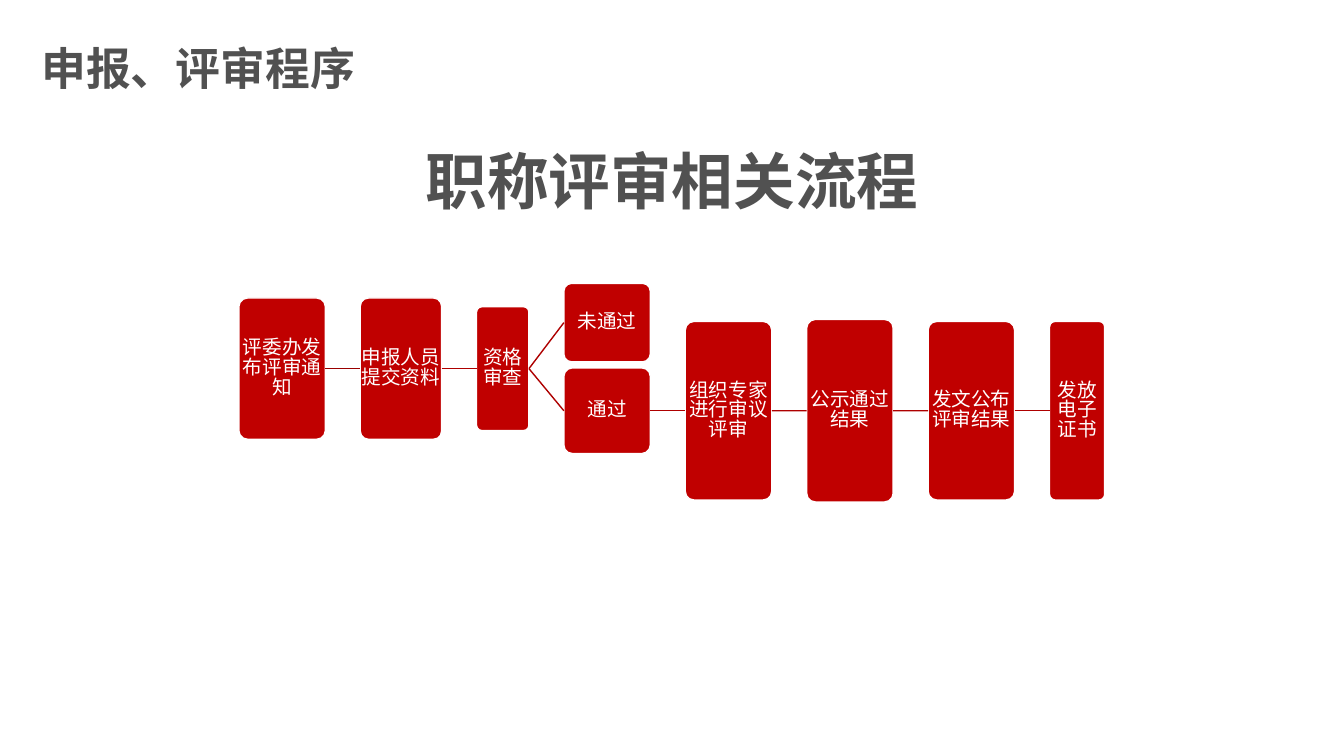
from pptx import Presentation
from pptx.dml.color import RGBColor as RGB
from pptx.enum.shapes import MSO_CONNECTOR as Conn, MSO_SHAPE as Form
from pptx.enum.text import MSO_ANCHOR as Anchor, PP_ALIGN as Align
from pptx.oxml.ns import qn
from pptx.util import Cm, Pt

RED = RGB(0xC0, 0x00, 0x00)
DARK = RGB(0x9A, 0x00, 0x00)
WINE = RGB(0xAE, 0x00, 0x00)
GRAY = RGB(0x51, 0x51, 0x51)
WHITE = RGB(0xFF, 0xFF, 0xFF)
CJK = "Noto Sans CJK SC"

TOPIC = "申报、评审程序"
TITLE = "职称评审相关流程"
LEFT, GAP = 6.02, 0.88
HIGH, MID, LOW = 8.13, 9.29, 10.35
STEPS = [
    (2.18, [("评委办发布评审通知", MID, 3.56)]),
    (2.05, [("申报人员提交资料", MID, 3.56)]),
    (1.32, [("资格审查", MID, 3.12)]),
    (2.18, [("未通过", HIGH, 1.98), ("通过", LOW, 2.16)]),
    (2.18, [("组织专家进行审议评审", LOW, 4.5)]),
    (2.18, [("公示通过结果", LOW, 4.6)]),
    (2.18, [("发文公布评审结果", LOW, 4.5)]),
    (1.39, [("发放电子证书", LOW, 4.5)]),
]


def write(shape, text, size, color, font="Arial", bold=False, wrap=True, space=None):
    frame = shape.text_frame
    frame.word_wrap = wrap
    frame.vertical_anchor = Anchor.MIDDLE
    para = frame.paragraphs[0]
    para.alignment = Align.CENTER
    para.line_spacing = space
    run = para.add_run()
    run.text = text
    run.font.name = font
    run.font.size = Pt(size)
    run.font.bold = bold
    run.font.color.rgb = color
    east = run._r.get_or_add_rPr().makeelement(qn("a:ea"), {"typeface": CJK})
    run._r.rPr.find(qn("a:latin")).addnext(east)


def add_box(slide, text, x, mid, wide, tall):
    box = slide.shapes.add_shape(
        Form.ROUNDED_RECTANGLE, Cm(x), Cm(mid - tall / 2), Cm(wide), Cm(tall))
    box.adjustments[0] = 0.1
    box.shadow.inherit = False
    box.fill.solid()
    box.fill.fore_color.rgb = RED
    box.line.color.rgb = WHITE
    box.line.width = Pt(1)
    frame = box.text_frame
    frame.margin_left = frame.margin_right = Cm(-0.05)
    frame.margin_top = frame.margin_bottom = Cm(0.03)
    write(box, text, 14, WHITE, space=0.83)
    return box


def join(slide, start, end, color):
    line = slide.shapes.add_connector(Conn.STRAIGHT, 0, 0, 0, 0)
    line.begin_connect(start, 3)
    line.end_connect(end, 1)
    line.line.color.rgb = color
    line.line.width = Pt(1)
    props = line._element.spPr
    props.append(props.makeelement(qn("a:effectLst"), {}))


def main():
    deck = Presentation()
    deck.slide_width, deck.slide_height = Cm(33.87), Cm(19.05)
    slide = deck.slides.add_slide(deck.slide_layouts[5])

    title = slide.shapes.title
    title.left, title.top = Cm(5.51), Cm(3.33)
    title.width, title.height = Cm(22.86), Cm(2.39)
    write(title, TITLE, 44, GRAY, font=CJK, bold=True)

    x, last = LEFT, None
    for wide, items in STEPS:
        boxes = [add_box(slide, text, x, mid, wide, tall) for text, mid, tall in items]
        if last:
            for box in boxes:
                join(slide, last, box, DARK if x < LEFT + 4 else WINE)
        last = boxes[-1]
        x += wide + GAP

    topic = slide.shapes.add_textbox(Cm(0.76), Cm(0.89), Cm(8.48), Cm(1.63))
    write(topic, TOPIC, 32, GRAY, bold=True, wrap=False)
    deck.save("out.pptx")


if __name__ == "__main__":
    main()
